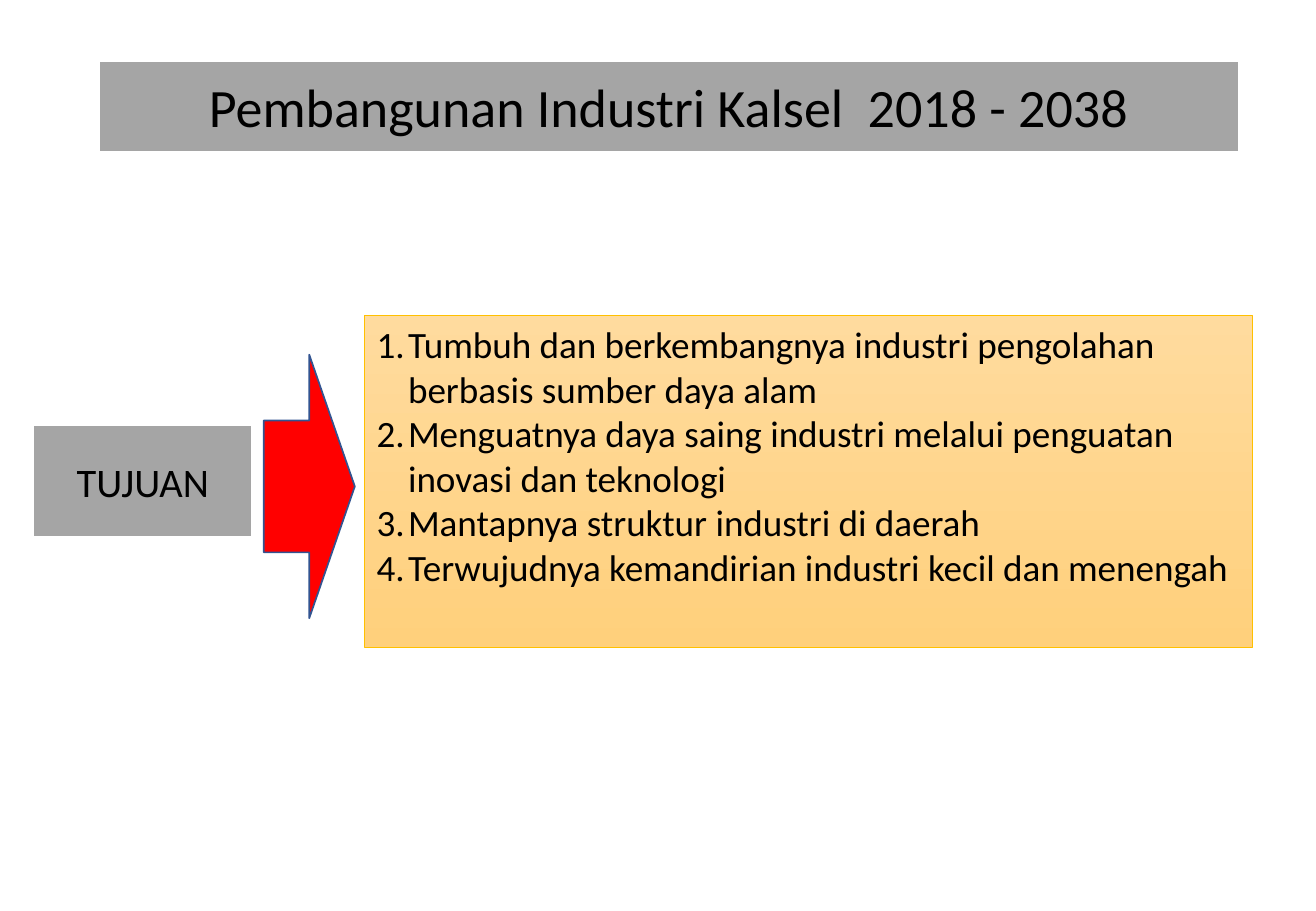
from dataclasses import dataclass

from lxml import etree
from pptx import Presentation
from pptx.dml.color import RGBColor
from pptx.enum.shapes import MSO_SHAPE
from pptx.enum.text import MSO_ANCHOR, PP_ALIGN
from pptx.oxml.ns import qn
from pptx.util import Pt

RECT = MSO_SHAPE.RECTANGLE
ARROW = MSO_SHAPE.RIGHT_ARROW
TOP, MIDDLE = MSO_ANCHOR.TOP, MSO_ANCHOR.MIDDLE
LEFT, CENTER = PP_ALIGN.LEFT, PP_ALIGN.CENTER
SCALE = 9144


@dataclass(frozen=True)
class Theme:
    font: str = "Calibri"
    ink: str = "000000"
    gray: str = "A5A5A5"
    white: str = "FFFFFF"
    red: str = "FF0000"
    blue: str = "325491"
    gold: str = "FFC000"
    light: str = "FFDB9E"
    deep: str = "FFD07C"
    title: int = 32
    label: int = 24
    body: int = 22


def px(count):
    return count * SCALE


def color(code):
    return RGBColor.from_string(code)


class Deck:
    def __init__(self, theme, width, height):
        self.theme = theme
        self.show = Presentation()
        self.show.slide_width = px(width)
        self.show.slide_height = px(height)
        self.slide = self.show.slides.add_slide(self.show.slide_layouts[6])

    def shape(self, kind, area, fill, edge, weight):
        item = self.slide.shapes.add_shape(kind, *map(px, area))
        item.shadow.inherit = False
        item.fill.solid()
        item.fill.fore_color.rgb = color(fill)
        item.line.color.rgb = color(edge)
        item.line.width = Pt(weight)
        return item

    def arrow(self, area):
        self.shape(ARROW, area, self.theme.red, self.theme.blue, 1)

    def words(self, item, text, size, align, anchor):
        frame = item.text_frame
        frame.text = text
        frame.word_wrap = True
        frame.vertical_anchor = anchor
        for para in frame.paragraphs:
            para.alignment = align
            for run in para.runs:
                run.font.name = self.theme.font
                run.font.size = Pt(size)
                run.font.color.rgb = color(self.theme.ink)

    def label(self, area, text, size):
        item = self.shape(RECT, area, self.theme.gray, self.theme.white, 1.5)
        self.words(item, text, size, CENTER, MIDDLE)

    def goals(self, area, lines, indent):
        look = self.theme
        item = self.shape(RECT, area, look.light, look.gold, 0.5)
        item.fill.gradient()
        item.fill.gradient_angle = 270
        for stop, code in zip(item.fill.gradient_stops, (look.light, look.deep)):
            stop.color.rgb = color(code)
        self.words(item, "\n".join(lines), look.body, LEFT, TOP)
        for para in item.text_frame.paragraphs:
            props = para._p.get_or_add_pPr()
            props.set("marL", str(px(indent)))
            props.set("indent", str(-px(indent)))
            etree.SubElement(props, qn("a:buFont"), typeface="+mj-lt")
            etree.SubElement(props, qn("a:buAutoNum"), type="arabicPeriod")

    def save(self):
        self.show.save("out.pptx")


def main():
    theme = Theme()
    deck = Deck(theme, 1083, 750)
    deck.goals((300, 260, 731, 273), (
        "Tumbuh dan berkembangnya industri pengolahan berbasis sumber daya alam",
        "Menguatnya daya saing industri melalui penguatan inovasi dan teknologi",
        "Mantapnya struktur industri di daerah",
        "Terwujudnya kemandirian industri kecil dan menengah",
    ), 26)
    deck.label((81, 50, 939, 75), "Pembangunan Industri Kalsel  2018 - 2038", theme.title)
    deck.arrow((217, 292, 75, 217))
    deck.label((27, 350, 181, 92), "TUJUAN", theme.label)
    deck.save()


if __name__ == "__main__":
    main()
